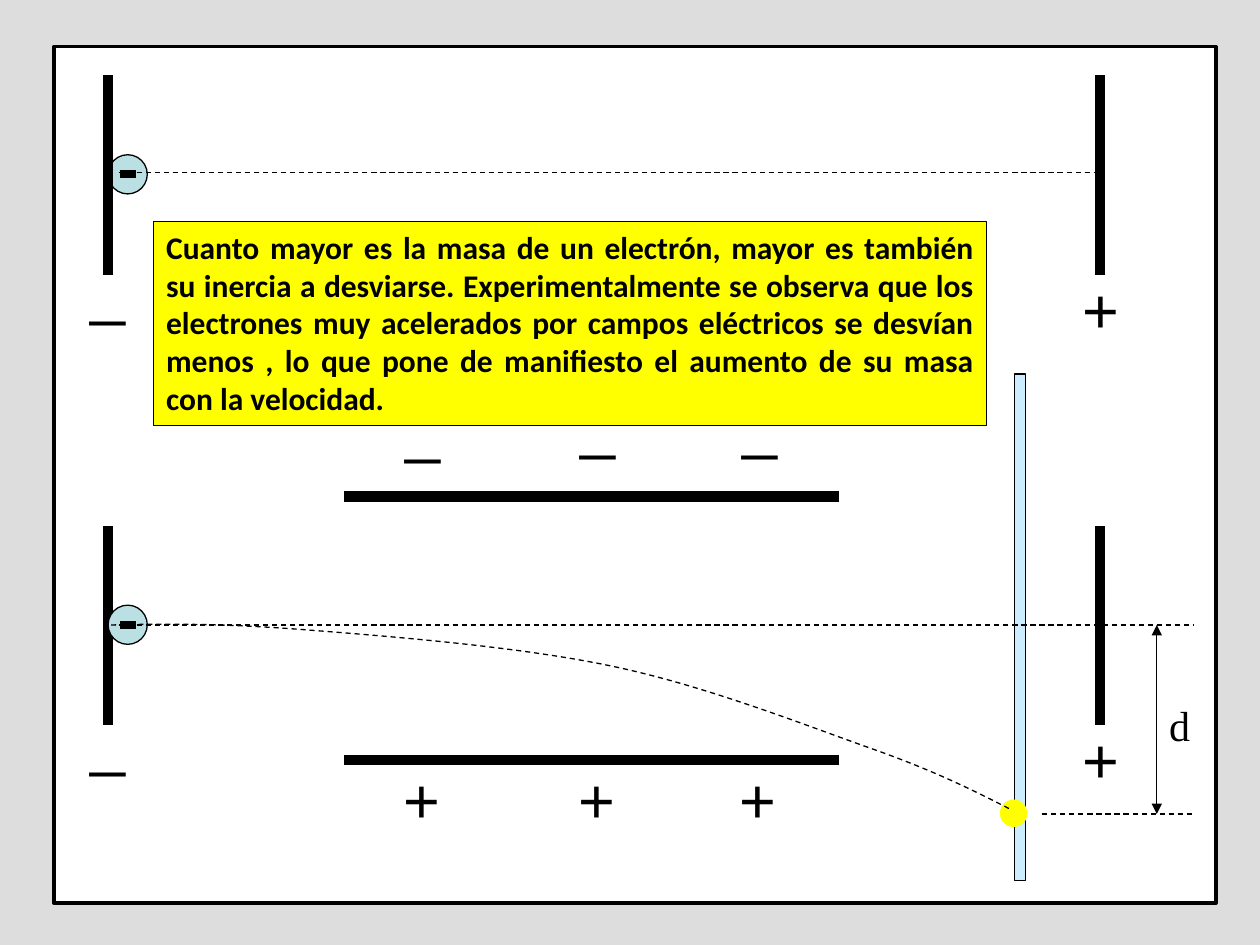
from dataclasses import dataclass

from lxml import etree
from pptx import Presentation
from pptx.dml.color import RGBColor
from pptx.enum.dml import MSO_LINE
from pptx.enum.shapes import MSO_CONNECTOR, MSO_SHAPE
from pptx.enum.text import MSO_ANCHOR, PP_ALIGN
from pptx.oxml.ns import qn
from pptx.util import Cm, Pt


@dataclass(frozen=True)
class Theme:
    backdrop: str = "DDDDDD"
    paper: str = "FFFFFF"
    ink: str = "000000"
    electron: str = "BBE0E3"
    screen: str = "CCECFF"
    highlight: str = "FFFF00"
    sign_font: str = "Arial"
    label_font: str = "Times New Roman"
    note_font: str = "Calibri"
    sign_size: int = 36
    label_size: int = 24
    note_size: int = 18
    thin: float = 0.75
    border: float = 2
    bar: float = 4.5
    plate: float = 6


THEME = Theme()

NOTE = (
    "Cuanto mayor es la masa de un electrón, mayor es también su inercia a desviarse. "
    "Experimentalmente se observa que los electrones muy acelerados por campos eléctricos "
    "se desvían menos , lo que pone de manifiesto el aumento de su masa con la velocidad."
)

# All positions are in centimetres.
FRAME = (1.09, 0.94, 23.42, 17.27)
NOTE_BOX = (3.1, 4.47, 16.79, 4.11)
SCREEN = (20.45, 7.54, 0.23, 10.21)
SPOT = (20.17, 16.13, 0.53, 0.53)
LABEL_BOX = (23.32, 13.97, 1.02, 1.27)
SIGN_SIZE = (2.21, 1.78)

CATHODE_X, ANODE_X = 2.18, 22.17
PLATE_TOP, PLATE_BOTTOM = 1.52, 5.54
ROW_STEP = 9.08
ELECTRON_TOP, ELECTRON_SIZE = 3.12, 0.79
ACCELERATOR_SIGNS = [("+", 20.6, 5.33), ("_", 0.58, 4.93)]

DEFLECTOR_LEFT, DEFLECTOR_RIGHT = 6.93, 16.92
DEFLECTOR_YS = (10.01, 15.32)
DEFLECTOR_SIGNS = [
    ("_", 6.93, 7.7), ("_", 10.44, 7.62), ("_", 13.72, 7.62),
    ("+", 6.91, 15.21), ("+", 10.44, 15.21), ("+", 13.69, 15.21),
]

AXIS_START, AXIS_END = 2.39, 24.05
TOP_AXIS_Y, AXIS_Y, IMPACT_Y = 3.48, 12.6, 16.41
IMPACT_START, ARROW_X = 21.01, 23.32

# Start point, then two control points and an end point for each curve.
TRAJECTORY = [
    (2.24, 12.6),
    (3.4, 12.57), (4.55, 12.57), (6.2, 12.7),
    (7.87, 12.83), (10.39, 13.03), (12.24, 13.41),
    (14.12, 13.79), (16.13, 14.58), (17.48, 15.06),
    (18.85, 15.54), (19.61, 15.93), (20.4, 16.33),
]


def color(value):
    return RGBColor.from_string(value)


def style_line(line, width=THEME.thin, dashed=False, ink=THEME.ink):
    line.color.rgb = color(ink)
    line.width = Pt(width)
    if dashed:
        line.dash_style = MSO_LINE.DASH


def add_block(slide, kind, area, fill, width=THEME.thin, outline=THEME.ink):
    block = slide.shapes.add_shape(kind, *map(Cm, area))
    block.shadow.inherit = False
    block.fill.solid()
    block.fill.fore_color.rgb = color(fill)
    style_line(block.line, width, ink=outline)
    return block


def add_line(slide, start, end, width=THEME.thin, dashed=False):
    line = slide.shapes.add_connector(MSO_CONNECTOR.STRAIGHT, *map(Cm, (*start, *end)))
    style_line(line.line, width, dashed)
    etree.SubElement(line._element.spPr, qn("a:effectLst"))
    return line


def write(shape, text, font, size, align, bold=False):
    frame = shape.text_frame
    frame.word_wrap = True
    frame.vertical_anchor = MSO_ANCHOR.TOP
    frame.text = text
    para = frame.paragraphs[0]
    para.alignment = align
    span = para.runs[0]
    span.font.name = font
    span.font.size = Pt(size)
    span.font.bold = bold
    span.font.color.rgb = color(THEME.ink)


def add_signs(slide, signs, drop=0):
    for sign, left, top in signs:
        box = slide.shapes.add_textbox(*map(Cm, (left, top + drop, *SIGN_SIZE)))
        write(box, sign, THEME.sign_font, THEME.sign_size, PP_ALIGN.RIGHT)


def add_electron(slide, drop):
    top = ELECTRON_TOP + drop
    add_block(slide, MSO_SHAPE.OVAL,
              (CATHODE_X, top, ELECTRON_SIZE, ELECTRON_SIZE), THEME.electron)
    middle = top + ELECTRON_SIZE / 2
    add_line(slide, (2.41, middle), (2.74, middle), THEME.bar)


def add_accelerator(slide, drop):
    for x in (ANODE_X, CATHODE_X):
        add_line(slide, (x, PLATE_TOP + drop), (x, PLATE_BOTTOM + drop), THEME.plate)
    add_signs(slide, ACCELERATOR_SIGNS, drop)


def add_deflector(slide):
    for y in DEFLECTOR_YS:
        add_line(slide, (DEFLECTOR_RIGHT, y), (DEFLECTOR_LEFT, y), THEME.plate)
    add_signs(slide, DEFLECTOR_SIGNS)


def add_trajectory(slide):
    """Draw a polyline, then turn each three of its segments into one Bézier curve."""
    points = [(Cm(x), Cm(y)) for x, y in TRAJECTORY]
    builder = slide.shapes.build_freeform(*points[0])
    builder.add_line_segments(points[1:], close=False)
    curve = builder.convert_to_shape()
    curve.shadow.inherit = False
    curve.fill.background()
    style_line(curve.line, dashed=True)
    segments = list(curve._element.iter(qn("a:lnTo")))
    for first in range(0, len(segments), 3):
        trio = segments[first:first + 3]
        bezier = etree.SubElement(trio[0].getparent(), qn("a:cubicBezTo"))
        for segment in trio:
            bezier.append(segment[0])
            segment.getparent().remove(segment)


def add_deviation(slide):
    add_line(slide, (AXIS_START, AXIS_Y), (AXIS_END, AXIS_Y), dashed=True)
    add_line(slide, (IMPACT_START, IMPACT_Y), (AXIS_END, IMPACT_Y), dashed=True)
    arrow = add_line(slide, (ARROW_X, AXIS_Y), (ARROW_X, IMPACT_Y))
    for end in ("a:headEnd", "a:tailEnd"):
        etree.SubElement(arrow.line._get_or_add_ln(), qn(end), type="triangle")
    label = slide.shapes.add_textbox(*map(Cm, LABEL_BOX))
    write(label, "d", THEME.label_font, THEME.label_size, PP_ALIGN.LEFT)


def main():
    deck = Presentation()
    deck.slide_width, deck.slide_height = Cm(25.4), Cm(19.05)
    slide = deck.slides.add_slide(deck.slide_layouts[6])
    slide.background.fill.solid()
    slide.background.fill.fore_color.rgb = color(THEME.backdrop)

    add_block(slide, MSO_SHAPE.RECTANGLE, FRAME, THEME.paper, THEME.border)
    add_electron(slide, 0)
    for drop in (0, ROW_STEP):
        add_accelerator(slide, drop)
    add_electron(slide, ROW_STEP)
    add_deflector(slide)
    add_block(slide, MSO_SHAPE.RECTANGLE, SCREEN, THEME.screen)
    add_block(slide, MSO_SHAPE.OVAL, SPOT, THEME.highlight, outline=THEME.highlight)
    add_trajectory(slide)
    add_deviation(slide)
    add_line(slide, (AXIS_START, TOP_AXIS_Y), (ANODE_X, TOP_AXIS_Y), dashed=True)
    note = add_block(slide, MSO_SHAPE.RECTANGLE, NOTE_BOX, THEME.highlight)
    write(note, NOTE, THEME.note_font, THEME.note_size, PP_ALIGN.JUSTIFY, bold=True)
    deck.save("out.pptx")


if __name__ == "__main__":
    main()
